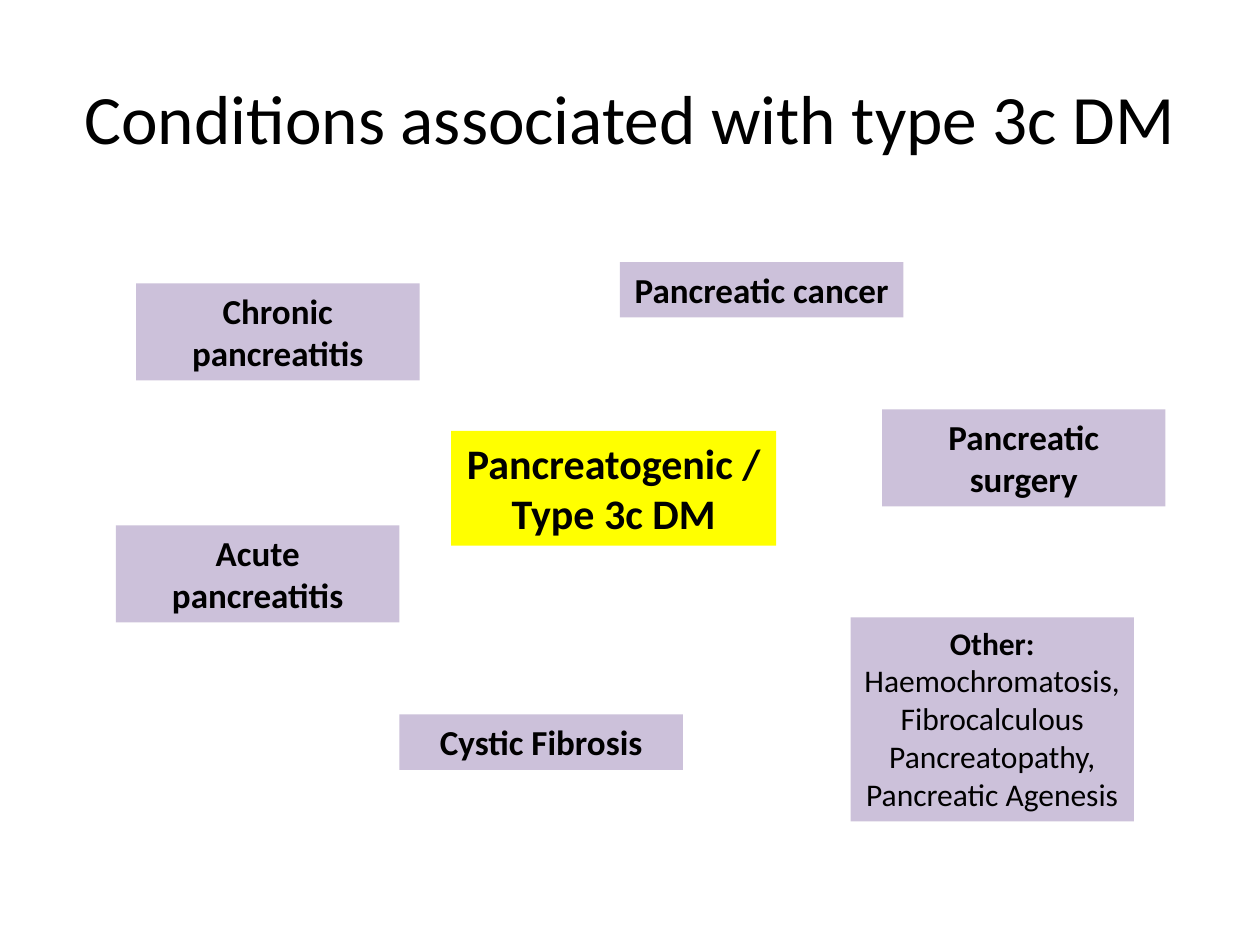
from dataclasses import dataclass

from pptx import Presentation
from pptx.dml.color import RGBColor
from pptx.enum.text import MSO_ANCHOR, MSO_AUTO_SIZE, PP_ALIGN
from pptx.util import Inches, Pt


@dataclass(frozen=True)
class Theme:
    font: str = "Calibri"
    ink: RGBColor = RGBColor(0x00, 0x00, 0x00)
    focus: RGBColor = RGBColor(0xFF, 0xFF, 0x00)
    condition: RGBColor = RGBColor(0xCC, 0xC1, 0xDA)
    title_size: float = 39.6
    focus_size: float = 24
    condition_size: float = 20
    other_size: float = 18


theme = Theme()


def write_line(paragraph, wording, size, bold):
    paragraph.alignment = PP_ALIGN.CENTER
    run = paragraph.add_run()
    run.text = wording
    run.font.name = theme.font
    run.font.size = Pt(size)
    run.font.bold = bold
    run.font.color.rgb = theme.ink


def add_label(left, top, width, height, fill, size, lines):
    label = slide.shapes.add_textbox(
        Inches(left), Inches(top), Inches(width), Inches(height)
    )
    label.fill.solid()
    label.fill.fore_color.rgb = fill
    frame = label.text_frame
    frame.word_wrap = True
    frame.auto_size = MSO_AUTO_SIZE.SHAPE_TO_FIT_TEXT
    for index, (wording, bold) in enumerate(lines):
        paragraph = frame.add_paragraph() if index else frame.paragraphs[0]
        write_line(paragraph, wording, size, bold)


deck = Presentation()
deck.slide_width = Inches(10)
deck.slide_height = Inches(7.5)
slide = deck.slides.add_slide(deck.slide_layouts[5])

title = slide.shapes.title
title.left, title.top = Inches(0.5), Inches(0.3)
title.width, title.height = Inches(9), Inches(1.25)
title.text_frame.vertical_anchor = MSO_ANCHOR.MIDDLE
write_line(
    title.text_frame.paragraphs[0],
    "Conditions associated with type 3c DM",
    theme.title_size,
    False,
)

add_label(
    3.58, 3.42, 2.58, 0.91, theme.focus, theme.focus_size,
    [("Pancreatogenic / Type 3c DM", True)],
)

condition_width = 2.25
one_line, two_lines = 0.44, 0.77
conditions = [
    ("Chronic pancreatitis", 1.08, 2.25, two_lines),
    ("Acute pancreatitis", 0.92, 4.17, two_lines),
    ("Pancreatic cancer", 4.92, 2.08, one_line),
    ("Pancreatic surgery", 7, 3.25, two_lines),
    ("Cystic Fibrosis", 3.17, 5.67, one_line),
]
for condition, left, top, height in conditions:
    add_label(
        left, top, condition_width, height, theme.condition,
        theme.condition_size, [(condition, True)],
    )

add_label(
    6.75, 4.9, condition_width, 1.62, theme.condition, theme.other_size,
    [
        ("Other:", True),
        ("Haemochromatosis, Fibrocalculous Pancreatopathy, Pancreatic Agenesis", False),
    ],
)

deck.save("out.pptx")
